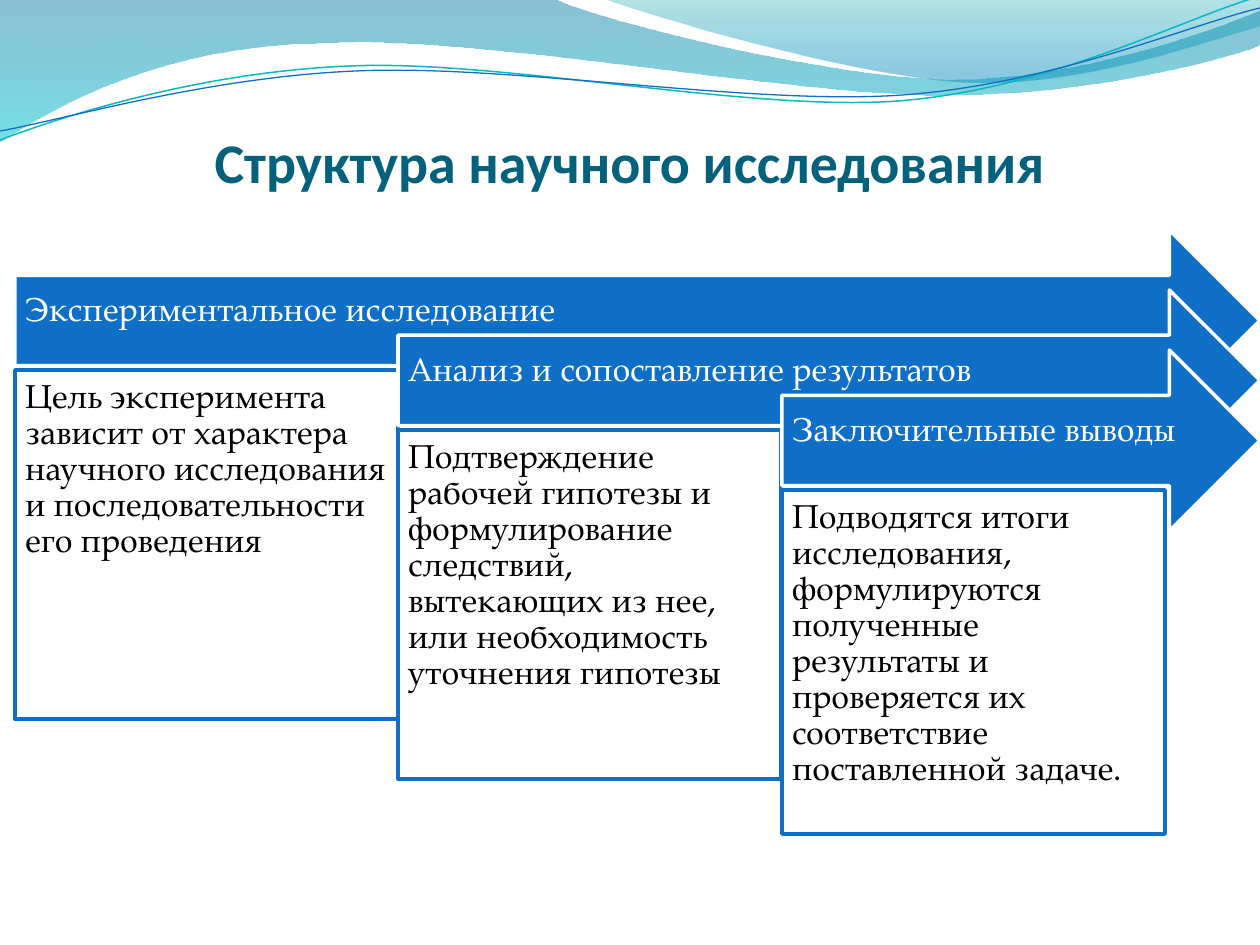
from dataclasses import dataclass

from lxml import etree
from pptx import Presentation
from pptx.dml.color import RGBColor
from pptx.enum.shapes import MSO_SHAPE
from pptx.enum.text import MSO_ANCHOR, PP_ALIGN
from pptx.oxml.ns import qn
from pptx.util import Emu, Pt

ARROW, RECT = MSO_SHAPE.RIGHT_ARROW, MSO_SHAPE.RECTANGLE
TOP, MIDDLE, BOTTOM = MSO_ANCHOR.TOP, MSO_ANCHOR.MIDDLE, MSO_ANCHOR.BOTTOM
LEFT, CENTER = PP_ALIGN.LEFT, PP_ALIGN.CENTER
PX = 914400 / 126


@dataclass(frozen=True)
class Theme:
    blue: str = "0F6FC6"
    teal: str = "0AB8BF"
    title: str = "04617B"
    white: str = "FFFFFF"
    black: str = "000000"
    title_font: str = "Calibri"
    body_font: str = "TeX Gyre Pagella"
    title_size: int = 32
    body_size: int = 19


theme = Theme()


def draw_curve(shapes, start, segments, close):
    """Outline from px points: a pair is a line, six numbers a Bezier curve."""
    points = [pair for s in segments for pair in zip(s[::2], s[1::2])]
    builder = shapes.build_freeform(*start, scale=PX)
    builder.add_line_segments(points, close=close)
    outline = builder.convert_to_shape()
    outline.shadow.inherit = False
    # Join the three points of each curve into one cubic segment
    nodes = iter(outline.element.xpath(".//a:path/a:lnTo"))
    for segment in segments:
        node = next(nodes)
        if len(segment) == 6:
            node.tag = qn("a:cubicBezTo")
            for _ in range(2):
                extra = next(nodes)
                node.append(extra[0])
                extra.getparent().remove(extra)
    return outline


def set_text(holder, text, font, size, color, align, anchor, insets, bold=False):
    """Fill in one paragraph; insets are left, top, right, bottom in px."""
    frame = holder.text_frame
    frame.text = text
    frame.word_wrap = True
    frame.vertical_anchor = anchor
    (frame.margin_left, frame.margin_top,
     frame.margin_right, frame.margin_bottom) = [Emu(round(i * PX)) for i in insets]
    paragraph = frame.paragraphs[0]
    paragraph.alignment = align
    run_font = paragraph.runs[0].font
    run_font.name, run_font.size, run_font.bold = font, Pt(size), bold
    run_font.color.rgb = RGBColor.from_string(color)
    return paragraph


prs = Presentation()
prs.slide_width, prs.slide_height = Emu(round(1260 * PX)), Emu(round(945 * PX))
slide = prs.slides.add_slide(prs.slide_layouts[5])
shapes = slide.shapes

# Header waves: start, segments, gradient stops (position, colour, opacity %)
waves = [
    ((0, 0),
     [(554, -1), (600, 21, 837, 79, 955, 79), (1075, 79, 1207, 33, 1260, 11),
      (1261, 45), (1239, 55, 1096, 96, 940, 95), (784, 95, 481, 35, 324, 43),
      (163, 45, 58, 105, -1, 142)],
     [(0, "0074A1", 45), (1, "00C6CF", 55)]),
    ((604, -1),
     [(641, 14, 859, 78, 969, 82), (1079, 87, 1211, 40, 1260, 26), (1260, 0)],
     [(0, "00A1A9", 30), (0.8, "008BBF", 45)]),
]
for start, segments, stops in waves:
    wave = draw_curve(shapes, start, segments, close=True)
    wave.line.fill.background()
    wave.fill.gradient()
    wave.fill.gradient_angle = 270
    for stop, (position, color, _) in zip(wave.fill.gradient_stops, stops):
        stop.position = position
        stop.color.rgb = RGBColor.from_string(color)
    for node, (_, _, opacity) in zip(wave.element.xpath(".//a:gs/a:srgbClr"), stops):
        etree.SubElement(node, qn("a:alpha")).set("val", str(opacity * 1000))

# Thin lines along the waves
strands = [
    ((0, 140), [(60, 117, 199, 72, 349, 66), (498, 59, 747, 112, 898, 101),
                (1050, 89, 1182, 19, 1257, -3)], theme.teal, 0.85),
    ((0, 131), [(59, 121, 207, 77, 357, 71), (508, 64, 752, 106, 903, 95),
                (1053, 84, 1186, 26, 1260, 8)], theme.blue, 0.75),
]
for start, segments, color, width in strands:
    strand = draw_curve(shapes, start, segments, close=False)
    strand.fill.background()
    strand.line.color.rgb = RGBColor.from_string(color)
    strand.line.width = Pt(width)

# Title
title = shapes.title
title.left, title.top, title.width, title.height = [
    Emu(round(v * PX)) for v in (63, 97, 1134, 98)]
set_text(title, "Структура научного исследования", theme.title_font,
         theme.title_size, theme.title, CENTER, BOTTOM, (0, 6, 0, 0), bold=True)

# Stages: each arrow runs to the right edge, with its card below
stages = [
    ("Экспериментальное исследование",
     "Цель эксперимента зависит от характера научного исследования "
     "и последовательности его проведения", 349),
    ("Анализ и сопоставление результатов",
     "Подтверждение рабочей гипотезы и формулирование следствий, вытекающих "
     "из нее, или необходимость уточнения гипотезы", 349),
    ("Заключительные выводы",
     "Подводятся итоги исследования, формулируются полученные результаты "
     "и проверяется их соответствие поставленной задаче.", 344),
]
FIRST_LEFT, LAST_LEFT, CARD_WIDTH = 15, 782, 383
FIRST_TOP, STAGE_DROP, ARROW_HEIGHT, CARD_OFFSET = 230, 60, 181, 140
for index, (heading, details, card_height) in enumerate(stages):
    left = FIRST_LEFT + index * (LAST_LEFT - FIRST_LEFT) // 2
    top = FIRST_TOP + index * STAGE_DROP
    parts = [
        (ARROW, (left, top, 1260 - left, ARROW_HEIGHT), theme.blue, theme.white,
         heading, theme.white, MIDDLE, (10, 10, 35, 29)),
        (RECT, (left, top + CARD_OFFSET, CARD_WIDTH, card_height), theme.white,
         theme.blue, details, theme.black, TOP, (10, 10, 10, 10)),
    ]
    for kind, box, fill, line, text, color, anchor, insets in parts:
        part = shapes.add_shape(kind, *[Emu(round(v * PX)) for v in box])
        part.shadow.inherit = False
        part.fill.solid()
        part.fill.fore_color.rgb = RGBColor.from_string(fill)
        part.line.color.rgb = RGBColor.from_string(line)
        part.line.width = Pt(2)
        paragraph = set_text(part, text, theme.body_font, theme.body_size,
                             color, LEFT, anchor, insets)
        paragraph.line_spacing = 0.9

prs.save("out.pptx")
